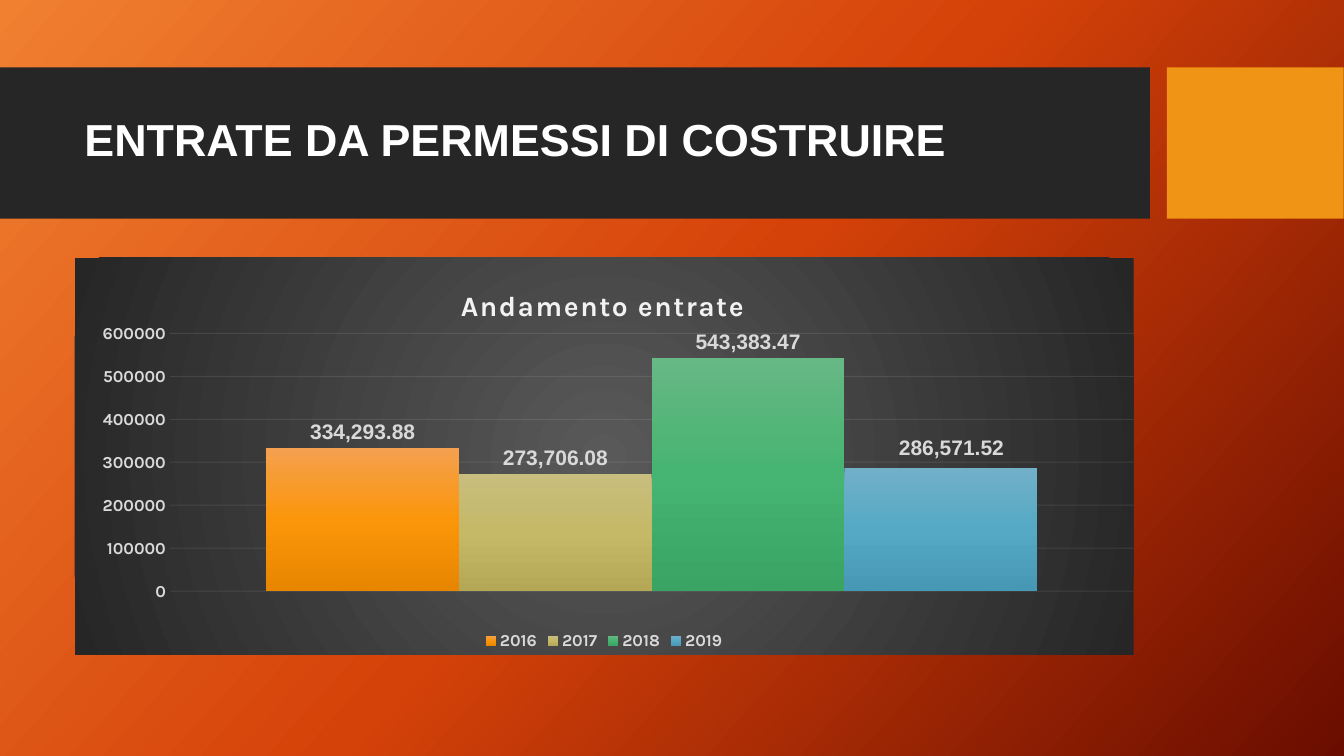
import lxml.etree
import pptx
import pptx.chart.data
import pptx.dml.color
import pptx.enum.chart
import pptx.enum.shapes
import pptx.enum.text
import pptx.oxml
import pptx.oxml.ns
import pptx.util
from pptx.util import Cm

qn = pptx.oxml.ns.qn
NAMESPACES = pptx.oxml.ns.nsdecls("a", "c")
AMOUNT_FORMAT = "#,##0.00"
PALE = "D9D9D9"
PERMIT_INCOME = [
    ("2016", 334293.88, ("F4A050", "FB960A", "E88600")),
    ("2017", 273706.08, ("C8BE7F", "C5B867", "B4A756")),
    ("2018", 543383.47, ("67B884", "46B472", "3AA464")),
    ("2019", 286571.52, ("71B0C8", "55A9C5", "4798B4")),
]


def rgb(value):
    return pptx.dml.color.RGBColor.from_string(value)


def set_font(font, name, size, color):
    font.name = name
    font.size = pptx.util.Pt(size)
    font.bold = True
    font.color.rgb = rgb(color)


def gradient(colors, angle=None):
    """Return a gradFill with even stops: linear at an angle, else circular."""
    step = 100000 // (len(colors) - 1)
    stops = "".join(
        f'<a:gs pos="{i * step}"><a:srgbClr val="{color}"/></a:gs>'
        for i, color in enumerate(colors)
    )
    if angle is None:
        direction = ('<a:path path="circle"><a:fillToRect l="50000" t="50000" '
                     'r="50000" b="50000"/></a:path>')
    else:
        direction = f'<a:lin ang="{angle * 60000}" scaled="0"/>'
    return pptx.oxml.parse_xml(
        f'<a:gradFill {NAMESPACES} rotWithShape="1">'
        f"<a:gsLst>{stops}</a:gsLst>{direction}</a:gradFill>"
    )


def swap_solid_fill(properties, grad_fill):
    properties.replace(properties.find(qn("a:solidFill")), grad_fill)


def manual_layout(x, y):
    return pptx.oxml.parse_xml(
        f"<c:layout {NAMESPACES}><c:manualLayout>"
        '<c:xMode val="edge"/><c:yMode val="edge"/>'
        f'<c:x val="{x}"/><c:y val="{y}"/>'
        "</c:manualLayout></c:layout>"
    )


def paint_background(slide):
    fill = slide.background.fill
    fill.solid()
    fill.fore_color.rgb = rgb("D54209")
    swap_solid_fill(slide.element.find(".//" + qn("p:bgPr")),
                    gradient(("F18031", "D54209", "6A0D00"), 42))


def add_band(slide, left, width, color):
    band = slide.shapes.add_shape(
        pptx.enum.shapes.MSO_SHAPE.RECTANGLE, Cm(left), Cm(1.7), Cm(width), Cm(3.81))
    band.shadow.inherit = False
    band.fill.solid()
    band.fill.fore_color.rgb = rgb(color)
    band.line.fill.background()


def add_heading(slide, text):
    frame = slide.shapes.add_textbox(Cm(1.88), Cm(2.08), Cm(26.7), Cm(3)).text_frame
    frame.word_wrap = True
    frame.vertical_anchor = pptx.enum.text.MSO_ANCHOR.MIDDLE
    paragraph = frame.paragraphs[0]
    paragraph.line_spacing = 0.9
    run = paragraph.add_run()
    run.text = text
    set_font(run.font, "Arial", 32, "FFFFFF")


def style_title(chart, text):
    chart.has_title = True
    run = chart.chart_title.text_frame.paragraphs[0].add_run()
    run.text = text
    set_font(run.font, "Karla", 20, "F2F2F2")
    title = chart.element.find(".//" + qn("c:title"))
    title.find(".//" + qn("a:rPr")).set("spc", "100")
    for layout in title.findall(qn("c:layout")):
        title.remove(layout)
    title.find(qn("c:tx")).addnext(manual_layout(0.36, 0.06))


def style_axes(chart):
    chart.category_axis.visible = False
    axis = chart.value_axis
    axis.minimum_scale, axis.maximum_scale, axis.major_unit = 0, 600000, 100000
    axis.major_tick_mark = pptx.enum.chart.XL_TICK_MARK.NONE
    axis.tick_labels.number_format = "General"
    axis.tick_labels.number_format_is_linked = False
    set_font(axis.tick_labels.font, "Karla", 12, PALE)
    axis.format.line.fill.background()
    grid_line = axis.major_gridlines.format.line
    grid_line.width = pptx.util.Pt(0.75)
    grid_line.color.rgb = rgb("F2F2F2")
    grid_color = chart.element.find(f".//{qn('c:majorGridlines')}//{qn('a:srgbClr')}")
    lxml.etree.SubElement(grid_color, qn("a:alpha")).set("val", "10000")


def style_series(series, colors):
    series.format.fill.solid()
    series.format.fill.fore_color.rgb = rgb(colors[1])
    swap_solid_fill(series.format.fill._xPr, gradient(colors, 90))
    labels = series.data_labels
    labels.show_value = True
    labels.number_format = AMOUNT_FORMAT
    labels.number_format_is_linked = False
    labels.position = pptx.enum.chart.XL_LABEL_POSITION.OUTSIDE_END
    set_font(labels.font, "Arial", 15, PALE)


def nudge_label(chart, series, x, y):
    """Shift the label of the only bar of a series by fractions of the chart."""
    label = series.points[0].data_label
    set_font(label.font, "Arial", 15, PALE)
    label.position = pptx.enum.chart.XL_LABEL_POSITION.OUTSIDE_END
    index = chart.element.find(f".//{qn('c:dLbl')}/{qn('c:idx')}")
    index.addnext(pptx.oxml.parse_xml(
        f'<c:numFmt {NAMESPACES} formatCode="{AMOUNT_FORMAT}" sourceLinked="0"/>'))
    index.addnext(pptx.oxml.parse_xml(
        f'<c:layout {NAMESPACES}><c:manualLayout><c:x val="{x}"/><c:y val="{y}"/>'
        "</c:manualLayout></c:layout>"))


def place_plot(chart, x, y, width, height):
    layout = manual_layout(x, y)
    manual = layout[0]
    manual.insert(0, pptx.oxml.parse_xml(
        f'<c:layoutTarget {NAMESPACES} val="inner"/>'))
    for tag, value in (("c:w", width), ("c:h", height)):
        lxml.etree.SubElement(manual, qn(tag)).set("val", str(value))
    plot_area = chart.element.find(".//" + qn("c:plotArea"))
    for existing in plot_area.findall(qn("c:layout")):
        plot_area.remove(existing)
    plot_area.insert(0, layout)


def paint_chart_area(chart):
    area = pptx.oxml.parse_xml(
        f"<c:spPr {NAMESPACES}><a:ln><a:noFill/></a:ln></c:spPr>")
    area.insert(0, gradient(("595959", "262626")))
    chart.element.find(qn("c:txPr")).addprevious(area)


def add_income_chart(slide):
    income = pptx.chart.data.CategoryChartData()
    income.categories = ["1"]
    for year, amount, _ in PERMIT_INCOME:
        income.add_series(year, [amount])
    chart = slide.shapes.add_chart(
        pptx.enum.chart.XL_CHART_TYPE.COLUMN_CLUSTERED,
        Cm(1.88), Cm(6.5), Cm(26.7), Cm(10), income).chart
    set_font(chart.font, "Karla", 10, "FFFFFF")
    paint_chart_area(chart)
    style_title(chart, "Andamento entrate")
    style_axes(chart)
    place_plot(chart, 0.09, 0.19, 0.91, 0.65)
    columns = chart.plots[0]
    columns.vary_by_categories = False
    columns.gap_width = 100
    columns.overlap = 0
    for series, (_, _, colors) in zip(columns.series, PERMIT_INCOME):
        style_series(series, colors)
    nudge_label(chart, columns.series[3], 0.01, -0.01)
    chart.has_legend = True
    chart.legend.position = pptx.enum.chart.XL_LEGEND_POSITION.BOTTOM
    chart.legend.include_in_layout = False
    set_font(chart.legend.font, "Karla", 12, PALE)


def main():
    deck = pptx.Presentation()
    deck.slide_width, deck.slide_height = Cm(33.87), Cm(19.05)
    slide = deck.slides.add_slide(deck.slide_layouts[6])
    paint_background(slide)
    add_band(slide, 0, 28.98, "262626")
    add_band(slide, 29.41, 4.45, "F09415")
    add_heading(slide, "ENTRATE DA PERMESSI DI COSTRUIRE")
    add_income_chart(slide)
    deck.save("out.pptx")


if __name__ == "__main__":
    main()
